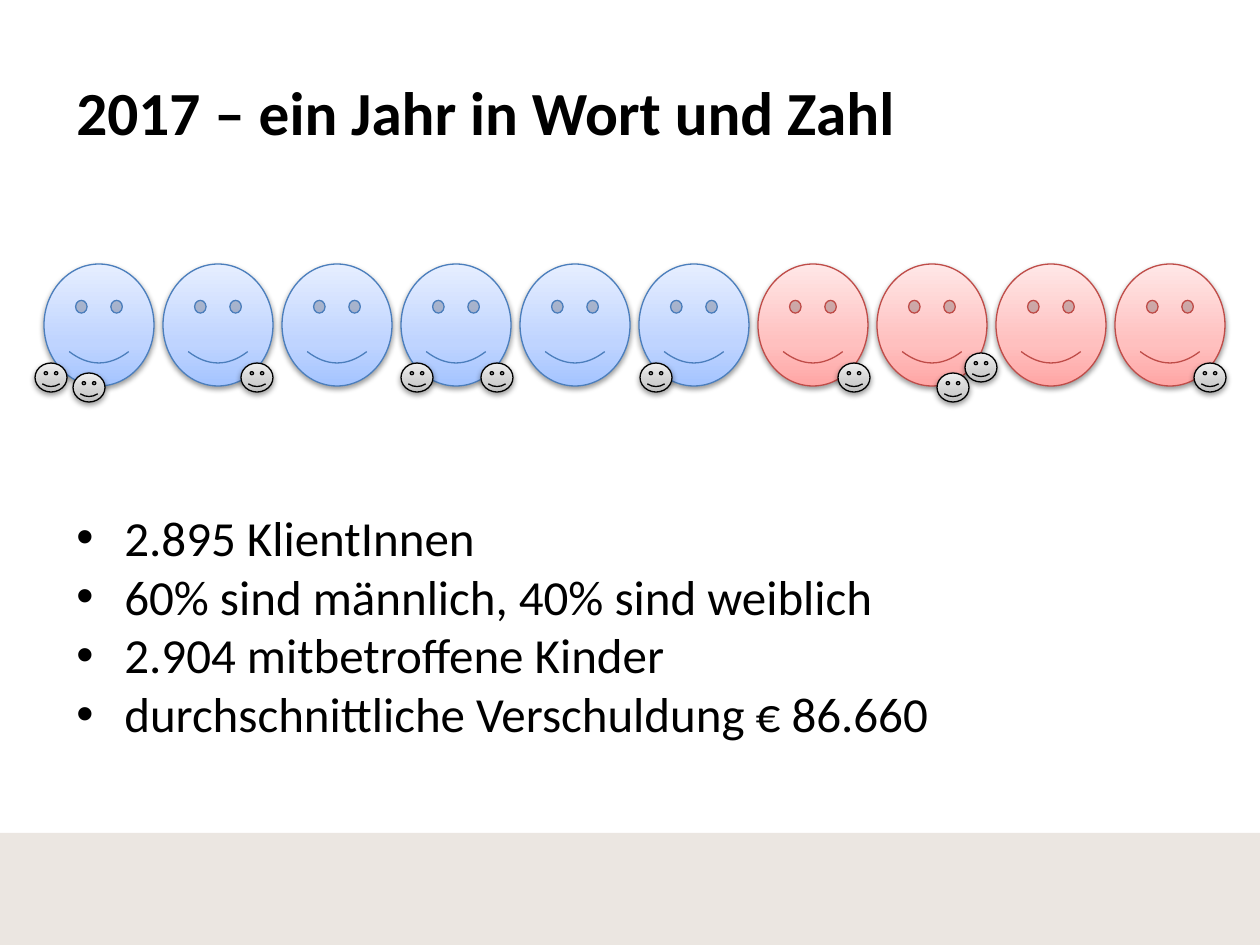
from dataclasses import dataclass

from lxml import etree
from pptx import Presentation
from pptx import util as u
from pptx.dml.color import RGBColor
from pptx.enum import shapes, text
from pptx.oxml import parse_xml
from pptx.oxml.ns import nsdecls, qn

SCALE = u.Inches(1) / 126
FONT = "Calibri"


@dataclass(frozen=True)
class Palette:
    bottom: str
    middle: str
    top: str
    line: str


@dataclass(frozen=True)
class Smiley:
    left: int
    top: int
    width: int
    height: int
    palette: Palette


MALE = Palette("A4C4FF", "BFD4FF", "E6EEFF", "4B7EBC")
FEMALE = Palette("FFA6A5", "FFC0BF", "FFE7E7", "BF4C48")
CHILD = Palette("BDBDBD", "D1D1D1", "EEEEEE", "000000")

CLIENTS = [MALE] * 6 + [FEMALE] * 4
CLIENT_LEFT, CLIENT_PITCH = 44, 119
CHILDREN = [
    (73, 373), (241, 363), (401, 363), (481, 363), (640, 363),
    (838, 363), (937, 373), (965, 353), (1194, 363), (35, 363),
]
FACTS = [
    "2.895 KlientInnen",
    "60% sind männlich, 40% sind weiblich",
    "2.904 mitbetroffene Kinder",
    "durchschnittliche Verschuldung € 86.660",
]


def px(length: int) -> u.Emu:
    return u.Emu(round(length * SCALE))


def colour(value: str) -> RGBColor:
    return RGBColor.from_string(value)


def add_smiley(page, smiley: Smiley) -> None:
    palette = smiley.palette
    face = page.shapes.add_shape(
        shapes.MSO_SHAPE.SMILEY_FACE,
        px(smiley.left), px(smiley.top), px(smiley.width), px(smiley.height),
    )
    face.line.color.rgb = colour(palette.line)
    face.line.width = u.Pt(0.75)
    stops = "".join(
        f'<a:gs pos="{position * 1000}"><a:srgbClr val="{shade}"/></a:gs>'
        for position, shade in ((0, palette.bottom), (35, palette.middle), (100, palette.top))
    )
    properties = face._element.spPr
    properties.find(qn("a:prstGeom")).addnext(parse_xml(
        f'<a:gradFill {nsdecls("a")} rotWithShape="1"><a:gsLst>{stops}</a:gsLst>'
        '<a:lin ang="16200000" scaled="0"/></a:gradFill>'
    ))
    properties.append(parse_xml(
        f'<a:effectLst {nsdecls("a")}><a:outerShdw blurRad="40000" dist="20000" '
        'dir="5400000" rotWithShape="0"><a:srgbClr val="000000">'
        '<a:alpha val="38000"/></a:srgbClr></a:outerShdw></a:effectLst>'
    ))


def add_text(page, left: int, top: int, width: int, height: int, lines: list[str],
             size: int, bold: bool = False, bullets: bool = False) -> None:
    box = page.shapes.add_textbox(px(left), px(top), px(width), px(height))
    frame = box.text_frame
    frame.word_wrap = True
    frame.vertical_anchor = text.MSO_ANCHOR.TOP
    for index, line in enumerate(lines):
        para = frame.add_paragraph() if index else frame.paragraphs[0]
        if bullets:
            properties = para._p.get_or_add_pPr()
            properties.set("marL", str(px(48)))
            properties.set("indent", str(-px(48)))
            etree.SubElement(properties, qn("a:buFont"), typeface="Arial")
            etree.SubElement(properties, qn("a:buChar"), char="•")
        span = para.add_run()
        span.text = line
        span.font.name = FONT
        span.font.size = u.Pt(size)
        span.font.bold = bold
        span.font.color.rgb = colour("000000")


def add_footer_band(page) -> None:
    band = page.shapes.add_shape(
        shapes.MSO_SHAPE.RECTANGLE, px(0), px(833), px(1260), px(112)
    )
    band.shadow.inherit = False
    band.fill.solid()
    band.fill.fore_color.rgb = colour("EBE6E1")
    band.line.fill.background()


def main() -> None:
    deck = Presentation()
    deck.slide_width, deck.slide_height = px(1260), px(945)
    page = deck.slides.add_slide(deck.slide_layouts[6])
    add_footer_band(page)
    add_text(page, 64, 68, 852, 90, ["2017 – ein Jahr in Wort und Zahl"], 35, bold=True)
    add_text(page, 64, 501, 1132, 250, FACTS, 28, bullets=True)
    for index, palette in enumerate(CLIENTS):
        add_smiley(page, Smiley(CLIENT_LEFT + index * CLIENT_PITCH, 264, 110, 122, palette))
    for left, top in CHILDREN:
        add_smiley(page, Smiley(left, top, 32, 29, CHILD))
    deck.save("out.pptx")


if __name__ == "__main__":
    main()
